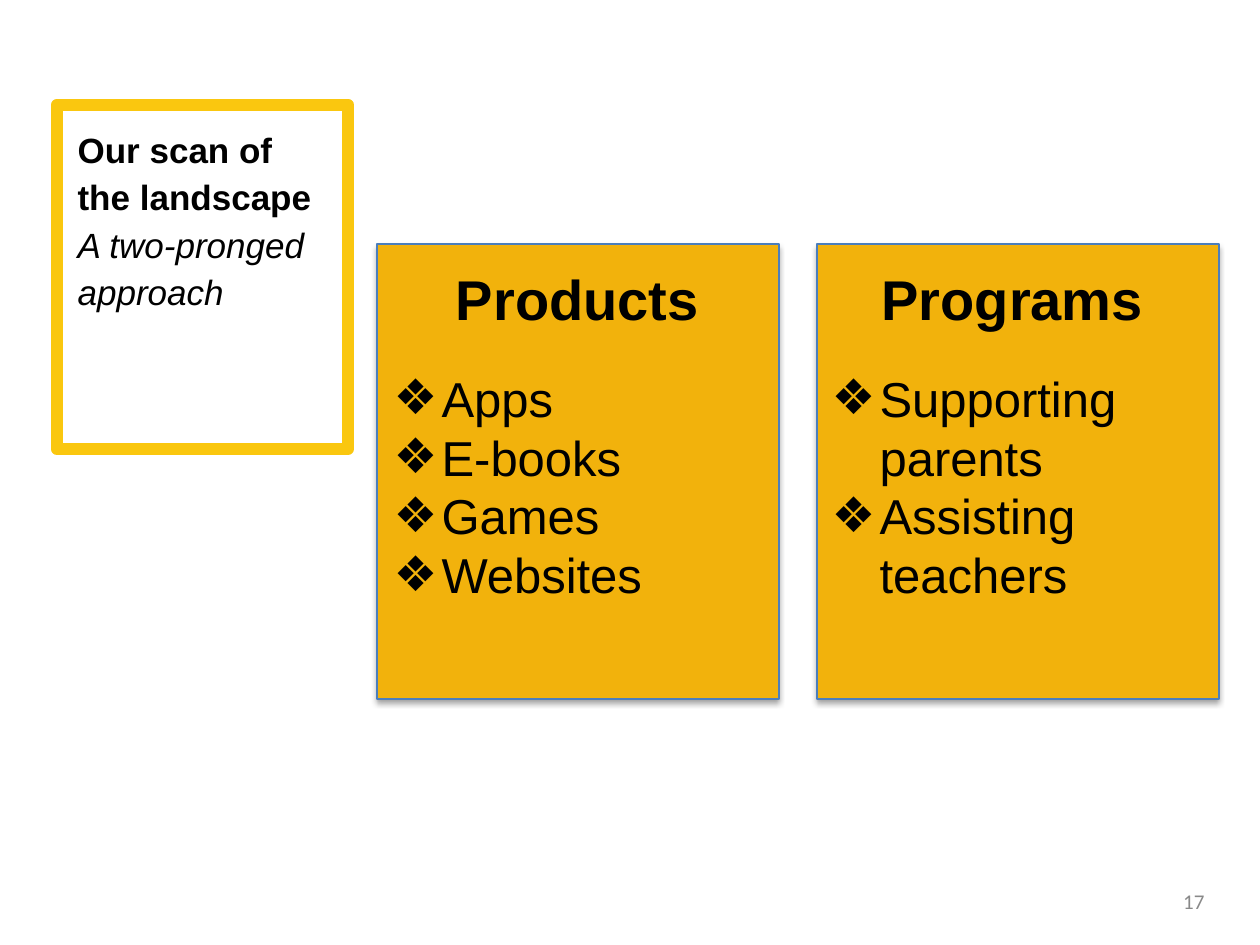
from dataclasses import dataclass

from lxml.etree import SubElement
from pptx import Presentation
from pptx.dml.color import RGBColor
from pptx.enum.shapes import MSO_SHAPE as Shape
from pptx.enum.text import MSO_ANCHOR as Anchor, MSO_AUTO_SIZE as AutoSize, PP_ALIGN as Align
from pptx.oxml.ns import qn
from pptx.util import Emu, Pt

EMU_PER_PX = 914400 // 126
PANEL_TOP, PANEL_WIDTH, PANEL_HEIGHT = 244, 402, 455
LIST_INDENT, BULLET_HANG = 88, 48


@dataclass
class Rect:
    left: int
    top: int
    width: int
    height: int

    def emu(self) -> list[Emu]:
        return [px(n) for n in (self.left, self.top, self.width, self.height)]


@dataclass
class Panel:
    left: int
    text_area: Rect
    heading: str
    items: list[str]


PANELS = [
    Panel(377, Rect(341, 258, 473, 357), "Products", ["Apps", "E-books", "Games", "Websites"]),
    Panel(817, Rect(779, 258, 467, 394), "Programs", ["Supporting parents", "Assisting teachers"]),
]


def px(length: int) -> Emu:
    return Emu(length * EMU_PER_PX)


def color(value: str) -> RGBColor:
    return RGBColor.from_string(value)


def place(box, area: Rect, anchor=Anchor.TOP):
    """Position a text-bearing shape and return its cleaned-up text frame."""
    box.left, box.top, box.width, box.height = area.emu()
    frame = box.text_frame
    frame.word_wrap = True
    frame.auto_size = AutoSize.NONE
    frame.vertical_anchor = anchor
    return frame


def style(para, size: int, bold=False, italic=False, align=Align.LEFT,
          ink="000000", font="Arial") -> None:
    para.alignment = align
    para.space_before = Pt(0)
    para.font.size, para.font.name = Pt(size), font
    para.font.bold, para.font.italic = bold, italic
    para.font.color.rgb = color(ink)


def set_bullet(para, char: str = "") -> None:
    """Give a paragraph a hanging bullet, or none when char is empty."""
    props = para._p.get_or_add_pPr()
    props.set("marL", str(px(LIST_INDENT) if char else 0))
    props.set("indent", str(-px(BULLET_HANG) if char else 0))
    if char:
        SubElement(props, qn("a:buFont"), typeface="Arial")
        SubElement(props, qn("a:buChar"), char=char)
    else:
        SubElement(props, qn("a:buNone"))


def add_rectangle(slide, area: Rect, line: str, weight: float, fill: str = ""):
    """Draw a rectangle behind the placeholders."""
    box = slide.shapes.add_shape(Shape.RECTANGLE, *area.emu())
    box.shadow.inherit = False
    if fill:
        box.fill.solid()
        box.fill.fore_color.rgb = color(fill)
    else:
        box.fill.background()
    box.line.color.rgb = color(line)
    box.line.width = Pt(weight)
    slide.shapes.title.element.addprevious(box.element)
    return box


def add_shadow(box) -> None:
    effects = box.element.spPr.find(qn("a:effectLst"))
    shadow = SubElement(effects, qn("a:outerShdw"), blurRad=str(Pt(3.1)), dist=str(Pt(1.8)),
                        dir="5400000", rotWithShape="0")
    tint = SubElement(shadow, qn("a:srgbClr"), val="000000")
    SubElement(tint, qn("a:alpha"), val="35000")


def add_panel(slide, body, panel: Panel) -> None:
    area = Rect(panel.left, PANEL_TOP, PANEL_WIDTH, PANEL_HEIGHT)
    add_shadow(add_rectangle(slide, area, "4B7EBC", 0.75, "F2B20C"))
    frame = place(body, panel.text_area)
    heading = frame.paragraphs[0]
    heading.text = panel.heading
    style(heading, 32, bold=True, align=Align.CENTER)
    heading.space_after = Pt(21)
    set_bullet(heading)
    for item in panel.items:
        para = frame.add_paragraph()
        para.text = item
        para.level = 1
        style(para, 28)
        set_bullet(para, "❖")


def main() -> None:
    deck = Presentation()
    deck.slide_width, deck.slide_height = px(1260), px(945)
    slide = deck.slides.add_slide(deck.slide_layouts.get_by_name("Two Content"))
    title, *bodies = slide.placeholders

    # Framed title
    add_rectangle(slide, Rect(57, 105, 291, 344), "FAC70F", 7)
    frame = place(title, Rect(65, 117, 263, 204))
    frame.text = "Our scan of the landscape\nA two-pronged approach"
    for para, italic in zip(frame.paragraphs, (False, True)):
        style(para, 20, bold=not italic, italic=italic)
        para.line_spacing = Pt(27)

    # Panels with lists
    for body, panel in zip(bodies, PANELS):
        add_panel(slide, body, panel)

    # Page number
    area = Rect(924, 876, 293, 50)
    number = place(slide.shapes.add_textbox(*area.emu()), area, Anchor.MIDDLE)
    number.text = "17"
    style(number.paragraphs[0], 12, align=Align.RIGHT, ink="898989", font="Calibri")

    deck.save("out.pptx")


if __name__ == "__main__":
    main()
